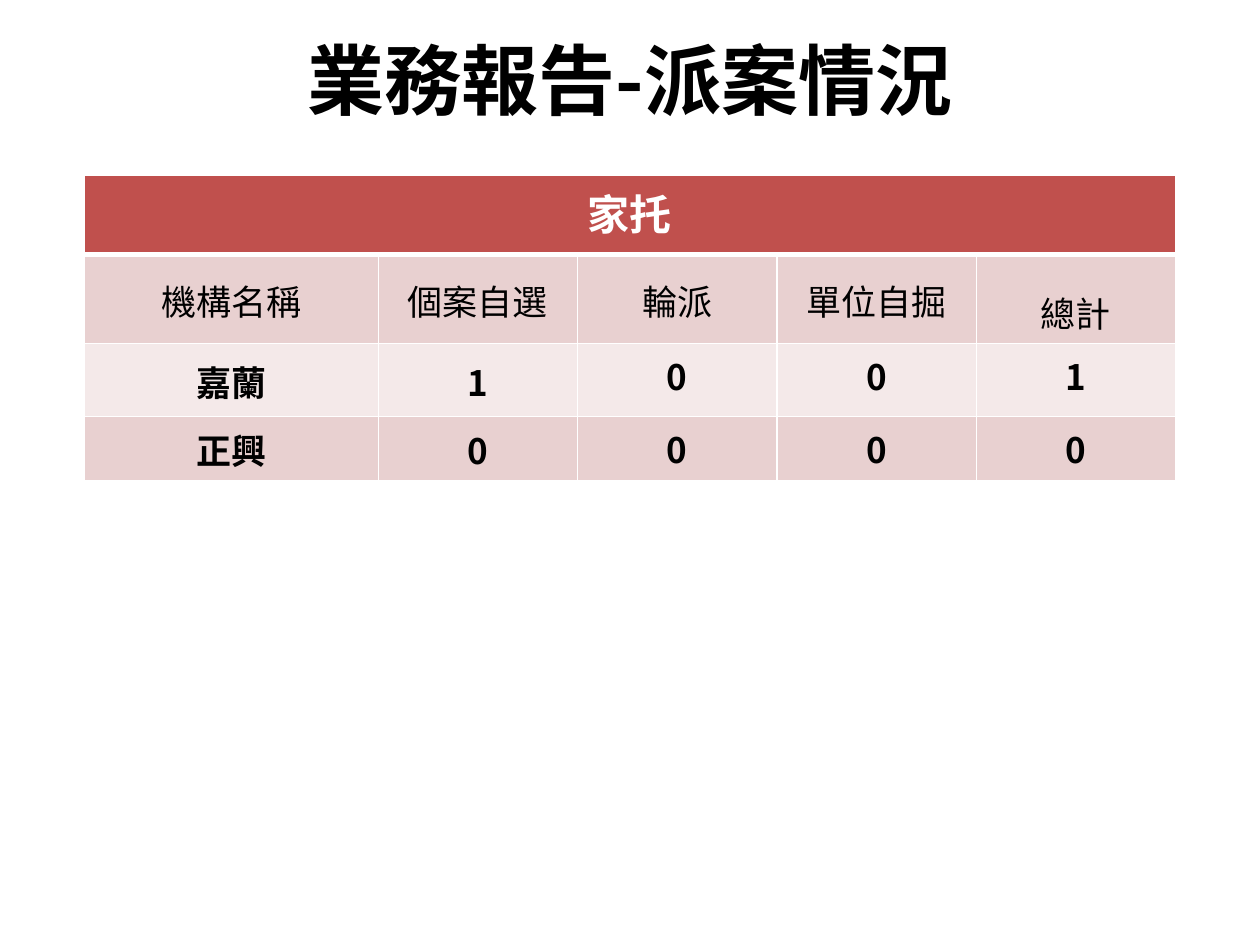
from lxml import etree
from pptx import Presentation
from pptx.dml.color import RGBColor
from pptx.enum.text import MSO_ANCHOR, PP_ALIGN
from pptx.oxml import parse_xml
from pptx.oxml.ns import nsdecls, qn
from pptx.util import Pt

CENTER, MIDDLE, TOP = PP_ALIGN.CENTER, MSO_ANCHOR.MIDDLE, MSO_ANCHOR.TOP
FONT = "Noto Sans CJK SC"

# Content
TITLE = "業務報告-派案情況"
ROWS = [
    ["家托", "", "", "", ""],
    ["機構名稱", "個案自選", "輪派", "單位自掘", "總計"],
    ["嘉蘭", "1", "0", "0", "1"],
    ["正興", "0", "0", "0", "0"],
]
FILLS = ["C0504D", "E8D0D0", "F4E9E9", "E8D0D0"]
TIGHT = [0, 4, 2, 2]  # leading cells per row with thin margins, centred vertically
WIDTHS = [168] + [113.9] * 4
HEIGHTS = [45.4, 46.1, 41.8, 36.7]


def rgb(code):
    return RGBColor.from_string(code)


def style(para, size, color, bold):
    para.alignment = CENTER
    font = para.font
    font.size, font.bold = Pt(size), bold
    font.color.rgb = rgb(color)
    font.name = FONT
    props = para._p.pPr.find(qn("a:defRPr"))
    etree.SubElement(props, qn("a:ea"), typeface=FONT)


def border(cell, row):
    props = cell._tc.get_or_add_tcPr()
    for i, side in enumerate("LRTB"):
        thick = (row, side) in ((0, "B"), (1, "T"))
        line = parse_xml(
            f'<a:ln{side} {nsdecls("a")} w="{Pt(3 if thick else 1)}">'
            '<a:solidFill><a:srgbClr val="FFFFFF"/></a:solidFill>'
            f'</a:ln{side}>')
        props.insert(i, line)


deck = Presentation()
deck.slide_width, deck.slide_height = Pt(720), Pt(540)
slide = deck.slides.add_slide(deck.slide_layouts[5])

# Title
title = slide.shapes.title
title.left, title.top, title.width, title.height = Pt(36), Pt(0), Pt(648), Pt(90)
title.text_frame.text = TITLE
title.text_frame.vertical_anchor = MIDDLE
style(title.text_frame.paragraphs[0], 44, "000000", True)

# Table
frame = slide.shapes.add_table(len(ROWS), len(WIDTHS), Pt(48.2), Pt(100.2),
                               Pt(sum(WIDTHS)), Pt(sum(HEIGHTS)))
table = frame.table
for col, width in zip(table.columns, WIDTHS):
    col.width = Pt(width)
for row, height in zip(table.rows, HEIGHTS):
    row.height = Pt(height)
table.cell(0, 0).merge(table.cell(0, len(WIDTHS) - 1))

for r, texts in enumerate(ROWS):
    for c, text in enumerate(texts):
        cell = table.cell(r, c)
        cell.fill.solid()
        cell.fill.fore_color.rgb = rgb(FILLS[r])
        border(cell, r)
        if cell.is_spanned:
            continue
        cell.text = text
        cell.vertical_anchor = TOP
        if c < TIGHT[r]:
            cell.vertical_anchor = MIDDLE
            cell.margin_left = cell.margin_right = cell.margin_top = Pt(0.72)
            cell.margin_bottom = Pt(0)
        para = cell.text_frame.paragraphs[0]
        if r == 0:
            style(para, 24, "FFFFFF", True)
        else:
            style(para, 20, "000000", r > 1)

# The total heading sits lower, with wider line spacing
table.cell(1, 4).text_frame.paragraphs[0].line_spacing = 1.5

deck.save("out.pptx")
